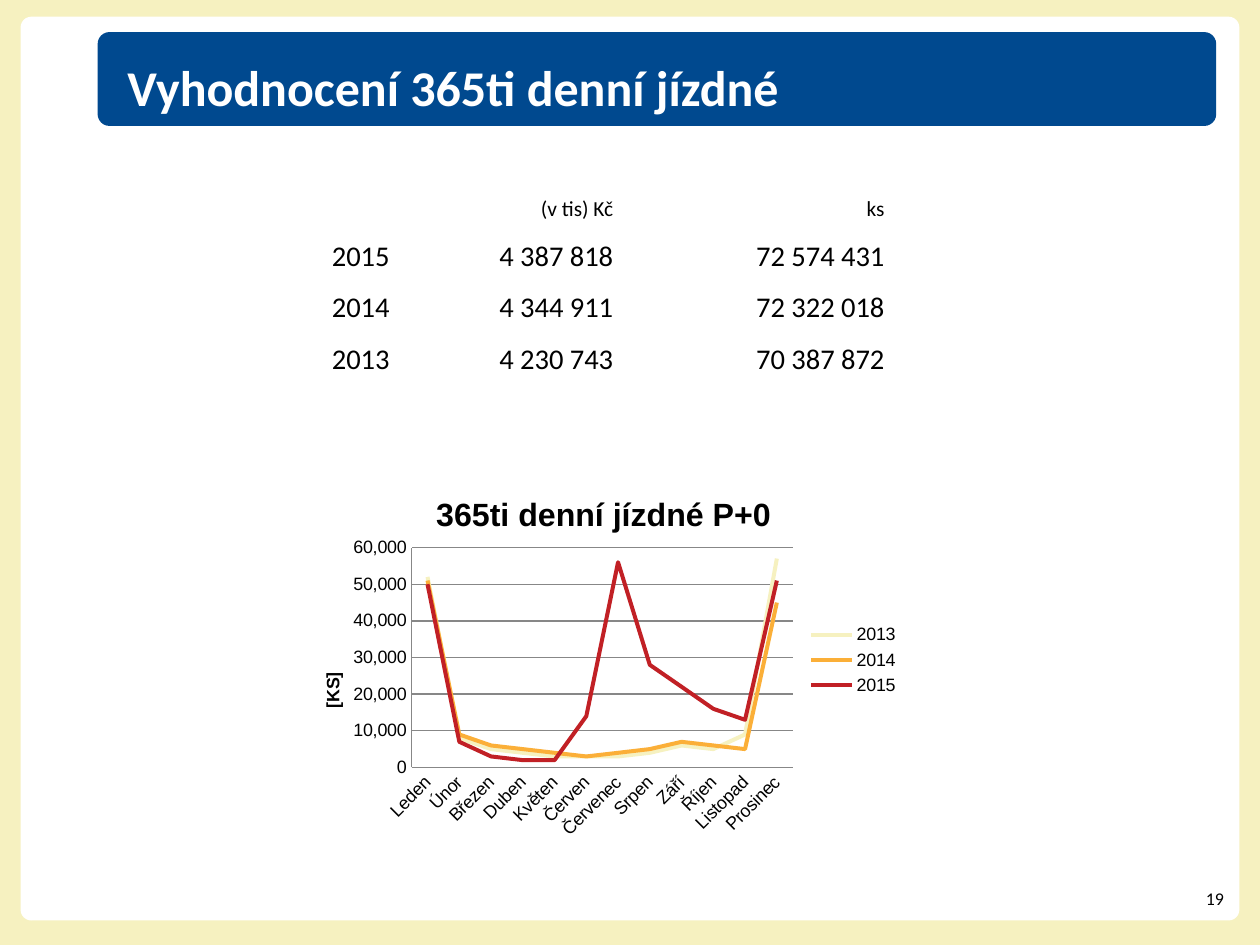
from dataclasses import dataclass

import lxml.etree
import pptx
import pptx.chart.data
import pptx.dml.color
import pptx.enum.chart
import pptx.enum.shapes
import pptx.enum.text
import pptx.oxml.ns
import pptx.util
from pptx.util import Inches

RGBColor = pptx.dml.color.RGBColor
CREAM = RGBColor(0xF6, 0xF1, 0xC0)
BLUE = RGBColor(0x00, 0x49, 0x8F)
ORANGE = RGBColor(0xFB, 0xAF, 0x38)
RED = RGBColor(0xC1, 0x20, 0x25)
GRAY = RGBColor(0x87, 0x87, 0x87)
BLACK = RGBColor(0, 0, 0)
WHITE = RGBColor(0xFF, 0xFF, 0xFF)


@dataclass
class Panel:
    left: float
    top: float
    width: float
    height: float
    corner: float
    color: RGBColor


@dataclass
class YearSales:
    year: str
    monthly: tuple[int, ...]
    color: RGBColor


PANELS = [
    Panel(0.16, 0.13, 9.48, 7.03, 0.012, WHITE),
    Panel(0.76, 0.25, 8.7, 0.73, 0.126, BLUE),
]
TOTALS = [
    ("", "(v tis) Kč", "ks"),
    ("2015", "4 387 818", "72 574 431"),
    ("2014", "4 344 911", "72 322 018"),
    ("2013", "4 230 743", "70 387 872"),
]
COLUMN_WIDTHS = (0.81, 1.74, 2.11)
ROW_HEIGHT = 0.4
MONTHS = ["Leden", "Únor", "Březen", "Duben", "Květen", "Červen",
          "Červenec", "Srpen", "Září", "Říjen", "Listopad", "Prosinec"]
SALES = [
    YearSales("2013", (52000, 8000, 5000, 4000, 3000, 3000, 3000, 4000,
                       6000, 5000, 9000, 57000), CREAM),
    YearSales("2014", (51000, 9000, 6000, 5000, 4000, 3000, 4000, 5000,
                       7000, 6000, 5000, 45000), ORANGE),
    YearSales("2015", (50000, 7000, 3000, 2000, 2000, 14000, 56000, 28000,
                       22000, 16000, 13000, 51000), RED),
]


def set_font(font, name: str, size: float, color: RGBColor, bold: bool = False) -> None:
    font.name = name
    font.size = pptx.util.Pt(size)
    font.bold = bold
    font.color.rgb = color


def add_panel(slide, panel: Panel) -> None:
    shape = slide.shapes.add_shape(
        pptx.enum.shapes.MSO_SHAPE.ROUNDED_RECTANGLE, Inches(panel.left),
        Inches(panel.top), Inches(panel.width), Inches(panel.height))
    shape.adjustments[0] = panel.corner
    shape.fill.solid()
    shape.fill.fore_color.rgb = panel.color
    shape.line.fill.background()
    shape.shadow.inherit = False


def place_title(slide) -> None:
    title = slide.shapes.title
    title.left, title.top = Inches(0.89), Inches(0.39)
    title.width, title.height = Inches(8.45), Inches(0.57)
    frame = title.text_frame
    frame.text = "Vyhodnocení 365ti denní jízdné"
    frame.vertical_anchor = pptx.enum.text.MSO_ANCHOR.MIDDLE
    frame.paragraphs[0].alignment = pptx.enum.text.PP_ALIGN.LEFT
    set_font(frame.paragraphs[0].runs[0].font, "Calibri", 28, WHITE, True)
    # The placeholder has to lie in front of the blue panel.
    slide.shapes._spTree.append(title._element)


def add_totals(slide) -> None:
    table = slide.shapes.add_table(
        len(TOTALS), len(COLUMN_WIDTHS), Inches(2.23), Inches(1.33),
        Inches(sum(COLUMN_WIDTHS)), Inches(ROW_HEIGHT * len(TOTALS))).table
    table.first_row = table.horz_banding = False
    for column, width in zip(table.columns, COLUMN_WIDTHS):
        column.width = Inches(width)
    for row_index, texts in enumerate(TOTALS):
        table.rows[row_index].height = Inches(ROW_HEIGHT)
        for column_index, text in enumerate(texts):
            cell = table.cell(row_index, column_index)
            cell.fill.background()
            cell.margin_left = cell.margin_right = cell.margin_top = Inches(0.01)
            cell.margin_bottom = 0
            cell.vertical_anchor = pptx.enum.text.MSO_ANCHOR.BOTTOM
            cell.text = text
            paragraph = cell.text_frame.paragraphs[0]
            paragraph.alignment = pptx.enum.text.PP_ALIGN.RIGHT
            set_font(paragraph.font, "Calibri", 16 if row_index else 12, BLACK)
            for run in paragraph.runs:
                set_font(run.font, "Calibri", 16 if row_index else 12, BLACK)


def set_layout(element, index: int, **settings: float | str) -> None:
    """Place a chart part by fractions of the chart; index is its layout's child slot."""
    qn = pptx.oxml.ns.qn
    layout = element.find(qn("c:layout"))
    if layout is None:
        layout = lxml.etree.Element(qn("c:layout"))
        element.insert(index, layout)
    manual = lxml.etree.SubElement(layout, qn("c:manualLayout"))
    for tag, value in settings.items():
        lxml.etree.SubElement(manual, qn(f"c:{tag}")).set("val", str(value))


def add_heading(owner_title, text: str, size: float, x: float, y: float) -> None:
    frame = owner_title.text_frame
    frame.text = text
    set_font(frame.paragraphs[0].runs[0].font, "Arial", size, BLACK, True)
    set_layout(owner_title._element, 1, xMode="edge", yMode="edge", x=x, y=y)


def add_sales_chart(slide) -> None:
    data = pptx.chart.data.CategoryChartData(number_format="#,##0")
    data.categories = MONTHS
    for sales in SALES:
        data.add_series(sales.year, sales.monthly)
    chart = slide.shapes.add_chart(
        pptx.enum.chart.XL_CHART_TYPE.LINE, Inches(2.23), Inches(3.64),
        Inches(4.86), Inches(2.95), data).chart
    set_font(chart.font, "Arial", 10, BLACK)
    chart.has_title = True
    add_heading(chart.chart_title, "365ti denní jízdné P+0", 18, 0.23, 0.05)

    plot = chart.plots[0]
    plot.vary_by_categories = False
    for series, sales in zip(plot.series, SALES):
        series.smooth = False
        series.marker.style = pptx.enum.chart.XL_MARKER_STYLE.NONE
        series.format.line.width = pptx.util.Pt(2.25)
        series.format.line.color.rgb = sales.color
    set_layout(chart._chartSpace.chart.plotArea, 0, layoutTarget="inner",
               xMode="edge", yMode="edge", x=0.2, y=0.21, w=0.61, h=0.58)

    values, months = chart.value_axis, chart.category_axis
    for axis in (values, months):
        axis.major_tick_mark = pptx.enum.chart.XL_TICK_MARK.NONE
        axis.format.line.color.rgb = GRAY
    values.minimum_scale, values.maximum_scale = 0, 60000
    values.major_unit = 10000
    values.tick_labels.number_format = "#,##0"
    values.tick_labels.number_format_is_linked = False
    values.has_major_gridlines = True
    values.major_gridlines.format.line.color.rgb = GRAY
    add_heading(values.axis_title, "[KS]", 10, 0.05, 0.53)
    months.tick_labels.font.size = pptx.util.Pt(10)
    months._element.txPr.bodyPr.set("rot", "-2700000")

    chart.has_legend = True
    chart.legend.position = pptx.enum.chart.XL_LEGEND_POSITION.RIGHT
    chart.legend.include_in_layout = False
    set_layout(chart.legend._element, 1, xMode="edge", yMode="edge", x=0.83, y=0.4)


def add_page_number(slide) -> None:
    frame = slide.shapes.add_textbox(
        Inches(9.36), Inches(6.9), Inches(0.16), Inches(0.17)).text_frame
    frame.margin_left = frame.margin_right = frame.margin_top = frame.margin_bottom = 0
    frame.vertical_anchor = pptx.enum.text.MSO_ANCHOR.MIDDLE
    frame.word_wrap = False
    frame.text = "19"
    frame.paragraphs[0].alignment = pptx.enum.text.PP_ALIGN.RIGHT
    set_font(frame.paragraphs[0].runs[0].font, "Calibri", 10, BLACK)


def main() -> None:
    deck = pptx.Presentation()
    deck.slide_width, deck.slide_height = Inches(9.8), Inches(7.35)
    slide = deck.slides.add_slide(deck.slide_layouts[5])
    slide.background.fill.solid()
    slide.background.fill.fore_color.rgb = CREAM
    for panel in PANELS:
        add_panel(slide, panel)
    place_title(slide)
    add_totals(slide)
    add_sales_chart(slide)
    add_page_number(slide)
    deck.save("out.pptx")


if __name__ == "__main__":
    main()
